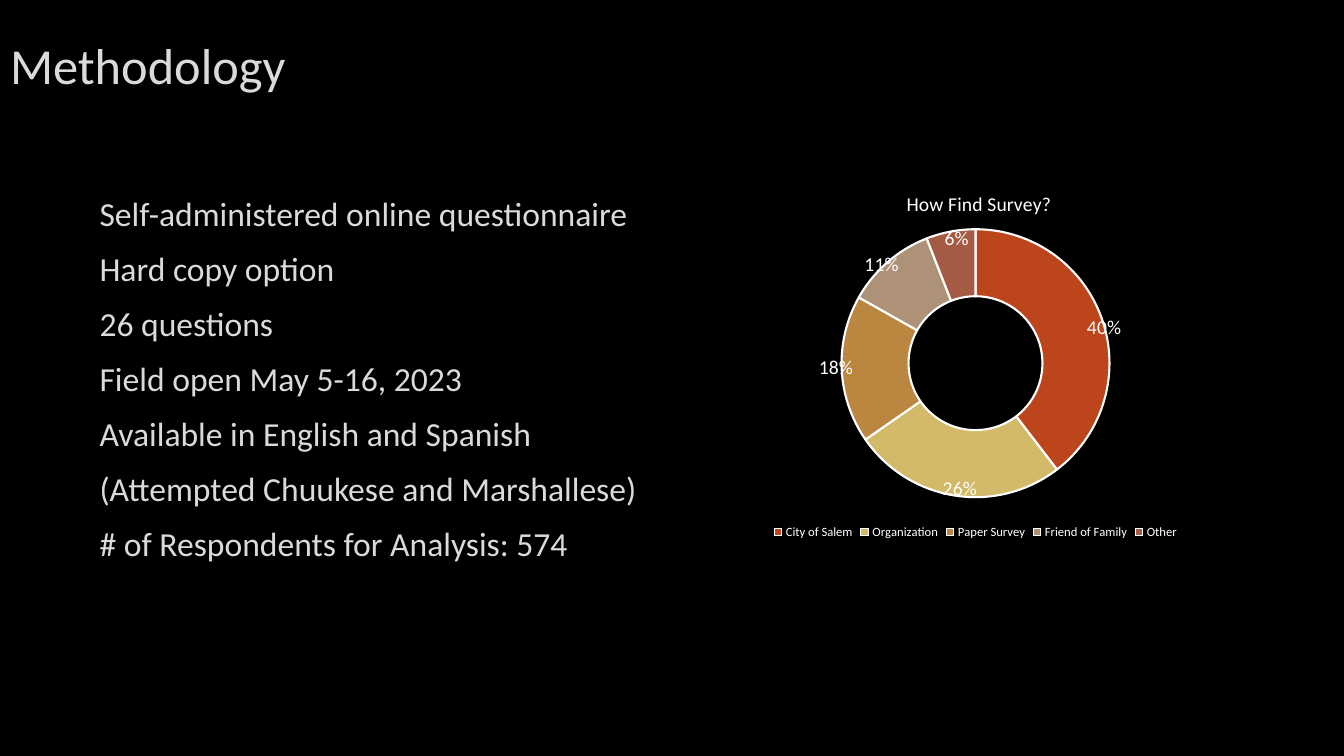
from pptx import Presentation
from pptx.chart.data import CategoryChartData
from pptx.dml.color import RGBColor
from pptx.enum.chart import XL_CHART_TYPE, XL_LEGEND_POSITION
from pptx.enum.text import MSO_ANCHOR, MSO_AUTO_SIZE, PP_ALIGN
from pptx.oxml import parse_xml
from pptx.oxml.ns import nsdecls, qn
from pptx.util import Cm, Pt

RING = XL_CHART_TYPE.DOUGHNUT
BOTTOM = XL_LEGEND_POSITION.BOTTOM
MIDDLE = MSO_ANCHOR.MIDDLE
FIXED = MSO_AUTO_SIZE.NONE
LEFT = PP_ALIGN.LEFT

BLACK = RGBColor(0, 0, 0)
WHITE = RGBColor(255, 255, 255)
PALE = RGBColor(0xDA, 0xDA, 0xDA)
RUST = RGBColor(0xBC, 0x45, 0x1B)
SAND = RGBColor(0xD3, 0xBA, 0x68)
OCHRE = RGBColor(0xBB, 0x86, 0x40)
TAUPE = RGBColor(0xAD, 0x92, 0x77)
BRICK = RGBColor(0xA5, 0x5A, 0x43)

FACTS = [
    "Self-administered online questionnaire",
    "Hard copy option",
    "26 questions",
    "Field open May 5-16, 2023",
    "Available in English and Spanish",
    "(Attempted Chuukese and Marshallese)",
    "# of Respondents for Analysis: 574",
]
SHARES = [
    ("City of Salem", 0.4, RUST, (0.06, -0.01)),
    ("Organization", 0.26, SAND, (0, 0.07)),
    ("Paper Survey", 0.18, OCHRE, (-0.07, 0)),
    ("Friend of Family", 0.11, TAUPE, (-0.05, -0.06)),
    ("Other", 0.06, BRICK, (0, -0.07)),
]


def assign(item, values):
    """Set each named value on the item."""
    for name, value in values.items():
        setattr(item, name, value)


def layout(**parts):
    """Return a manual chart layout with the given parts."""
    body = "".join(f'<c:{key} val="{val}"/>' for key, val in parts.items())
    return parse_xml(f'<c:layout {nsdecls("c")}><c:manualLayout>{body}'
                     '</c:manualLayout></c:layout>')


def place(item, index, **parts):
    """Swap any layout of a chart item for a manual one."""
    for old in item.findall(qn("c:layout")):
        item.remove(old)
    item.insert(index, layout(**parts))


class Deck:
    """Hold the style and the current slide."""

    face = "Calibri"

    def __init__(self):
        """Start a wide deck with one black slide."""
        self.deck = Presentation()
        assign(self.deck, {"slide_width": Cm(33.87), "slide_height": Cm(19.05)})
        self.slide = self.deck.slides.add_slide(self.deck.slide_layouts[5])
        fill = self.slide.background.fill
        fill.solid()
        fill.fore_color.rgb = BLACK

    def font(self, font, size, color):
        """Format a font."""
        assign(font, {"name": self.face, "size": Pt(size), "bold": False})
        font.color.rgb = color

    def lines(self, shape, lines, size, before):
        """Fill a shape with one paragraph for each line."""
        frame = shape.text_frame
        frame.text = "\n".join(lines)
        assign(frame, {"word_wrap": True, "auto_size": FIXED,
                       "vertical_anchor": MIDDLE})
        for para in frame.paragraphs:
            assign(para, {"alignment": LEFT, "space_before": Pt(before),
                          "space_after": Pt(6)})
            self.font(para.runs[0].font, size, PALE)

    def title(self, text, box):
        """Place the slide title."""
        shape = self.slide.shapes.title
        assign(shape, dict(zip(("left", "top", "width", "height"), box)))
        self.lines(shape, [text], 36, 0)

    def text(self, lines, box):
        """Add a text box."""
        self.lines(self.slide.shapes.add_textbox(*box), lines, 24, 4.5)

    def ring(self, title, shares, box):
        """Add a doughnut chart."""
        data = CategoryChartData(number_format="0%")
        data.categories = [share[0] for share in shares]
        data.add_series("Series 1", [share[1] for share in shares])
        chart = self.slide.shapes.add_chart(RING, *box, data).chart
        self.font(chart.font, 10, WHITE)
        self.head(chart, title)
        assign(chart, {"has_legend": True})
        assign(chart.legend, {"position": BOTTOM, "include_in_layout": False})
        self.font(chart.legend.font, 9, WHITE)
        plot = chart.plots[0]
        plot.vary_by_categories = True
        plot._element.find(qn("c:holeSize")).set("val", "75")
        area = chart._chartSpace.chart.plotArea
        place(area, 0, layoutTarget="inner", xMode="edge", yMode="edge",
              x=0.26, y=0.16, w=0.48, h=0.72)
        self.slices(plot.series[0], shares)

    def head(self, chart, title):
        """Set the chart title."""
        chart.has_title = True
        frame = chart.chart_title.text_frame
        frame.text = title
        self.font(frame.paragraphs[0].runs[0].font, 14, WHITE)
        place(chart.chart_title._element, 1, xMode="edge", yMode="edge",
              x=0.37, y=0.05)

    def slices(self, series, shares):
        """Colour the slices and move their labels outward."""
        labels = series.data_labels
        assign(labels, {"show_value": True, "number_format": "0%",
                        "number_format_is_linked": False})
        self.font(labels.font, 14, WHITE)
        for index, (_, _, color, (x, y)) in enumerate(shares):
            point = series.points[index]
            point.format.fill.solid()
            point.format.fill.fore_color.rgb = color
            point.format.line.color.rgb = WHITE
            point.format.line.width = Pt(1.5)
            self.font(point.data_label.font, 14, WHITE)
            label = labels._element.findall(qn("c:dLbl"))[index]
            for spot in label.findall(qn("c:dLblPos")):
                label.remove(spot)
            place(label, 1, x=x, y=y)


def main():
    """Build and save the slide."""
    deck = Deck()
    deck.title("Methodology", (Cm(0), Cm(0), Cm(33.87), Cm(3.25)))
    deck.text(FACTS, (Cm(2.26), Cm(3.1), Cm(16.03), Cm(12.85)))
    deck.ring("How Find Survey?", SHARES,
              (Cm(17.55), Cm(4.24), Cm(14.07), Cm(9.45)))
    deck.deck.save("out.pptx")


if __name__ == "__main__":
    main()
